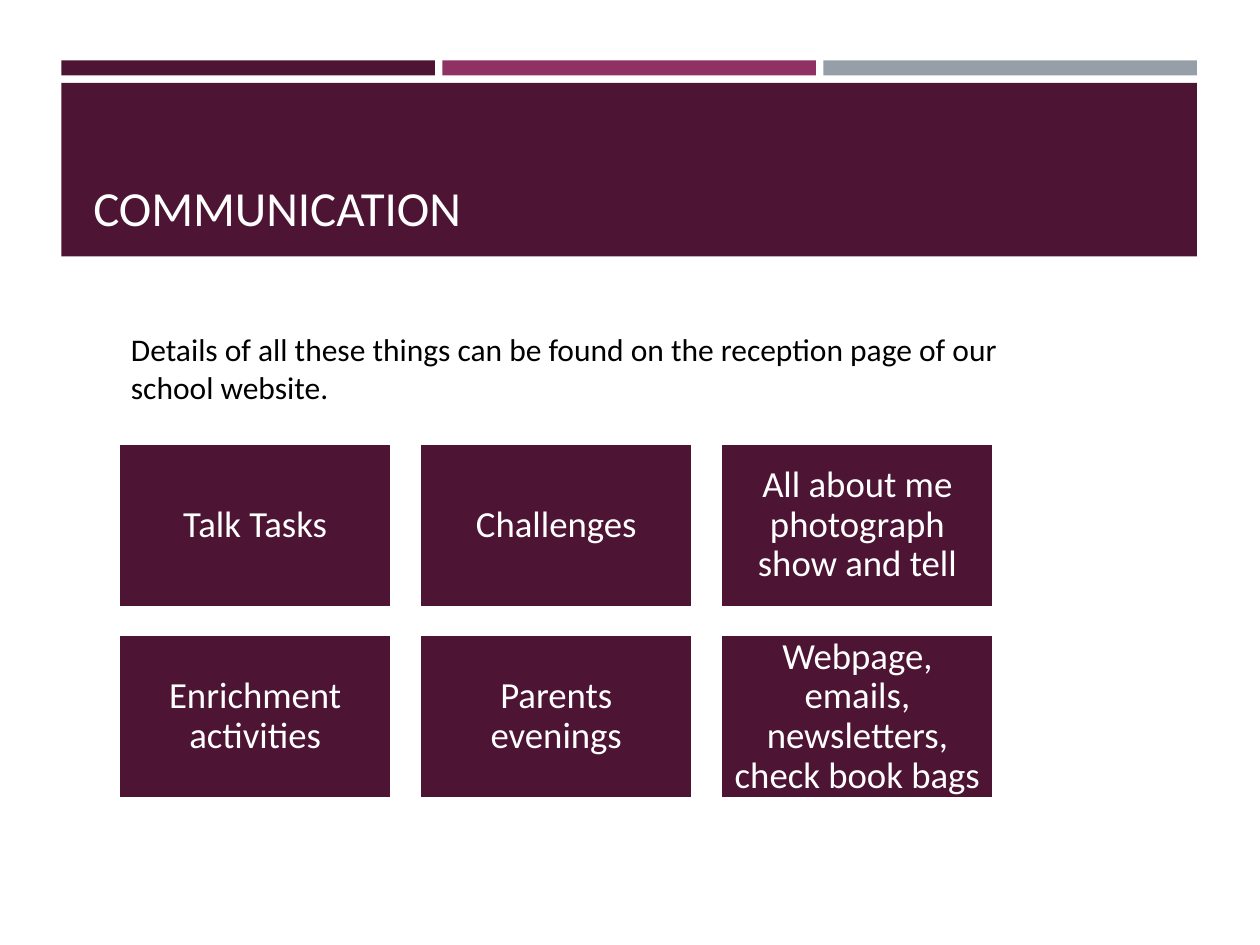
import pptx
import pptx.dml.color
import pptx.enum.shapes
import pptx.enum.text
import pptx.util

Cm = pptx.util.Cm
Pt = pptx.util.Pt
RECT = pptx.enum.shapes.MSO_SHAPE.RECTANGLE
ALIGN = pptx.enum.text.PP_ALIGN
ANCHOR = pptx.enum.text.MSO_ANCHOR

theme = {
    "font": "Calibri",
    "plum": "4D1434", "rose": "903163", "grey": "969FA7",
    "white": "FFFFFF", "black": "000000",
    "title": 28, "tile": 21, "note": 18,
}


def color(name):
    return pptx.dml.color.RGBColor.from_string(theme[name])


def write(shape, text, size, tint, align=ALIGN.LEFT, anchor=ANCHOR.TOP,
          space=1.0, inset=(0.25, 0.13)):
    frame = shape.text_frame
    frame.word_wrap = True
    frame.auto_size = pptx.enum.text.MSO_AUTO_SIZE.NONE
    frame.vertical_anchor = anchor
    frame.margin_left = frame.margin_right = Cm(inset[0])
    frame.margin_top = frame.margin_bottom = Cm(inset[1])
    frame.text = text
    para = frame.paragraphs[0]
    para.alignment = align
    para.line_spacing = space
    font = para.runs[0].font
    font.name = theme["font"]
    font.size = Pt(theme[size])
    font.color.rgb = color(tint)


def block(left, top, width, height, fill):
    shape = shapes.add_shape(RECT, Cm(left), Cm(top), Cm(width), Cm(height))
    shape.shadow.inherit = False
    shape.fill.solid()
    shape.fill.fore_color.rgb = color(fill)
    shape.line.fill.background()
    return shape


deck = pptx.Presentation()
deck.slide_width, deck.slide_height = Cm(25.4), Cm(19.05)
slide = deck.slides.add_slide(deck.slide_layouts[5])
shapes = slide.shapes
title = shapes.title

# Header: three thin bars over a wide band, all behind the title
header = [block(1.24 + 7.68 * col, 1.22, 7.53, 0.3, fill)
          for col, fill in enumerate(("plum", "rose", "grey"))]
header.append(block(1.24, 1.67, 22.89, 3.5, "plum"))
for part in header:
    title.element.addprevious(part.element)

# Title
title.left, title.top = Cm(1.63), Cm(1.9)
title.width, title.height = Cm(22.2), Cm(3)
write(title, "COMMUNICATION", "title", "white", anchor=ANCHOR.BOTTOM)

# Tiles in a grid of three columns
tiles = (
    "Talk Tasks", "Challenges", "All about me photograph show and tell",
    "Enrichment activities", "Parents evenings",
    "Webpage, emails, newsletters, check book bags",
)
for index, text in enumerate(tiles):
    row, col = divmod(index, 3)
    tile = block(2.39 + 6.07 * col, 8.94 + 3.86 * row, 5.51, 3.3, "plum")
    tile.line.color.rgb = color("white")
    tile.line.width = Pt(1.75)
    write(tile, text, "tile", "white", align=ALIGN.CENTER,
          anchor=ANCHOR.MIDDLE, space=0.9, inset=(0.23, 0.23))

# Note above the tiles
note = shapes.add_textbox(Cm(2.39), Cm(6.53), Cm(19.3), Cm(1.8))
write(note, "Details of all these things can be found on the reception page "
      "of our school website.", "note", "black")

deck.save("out.pptx")
